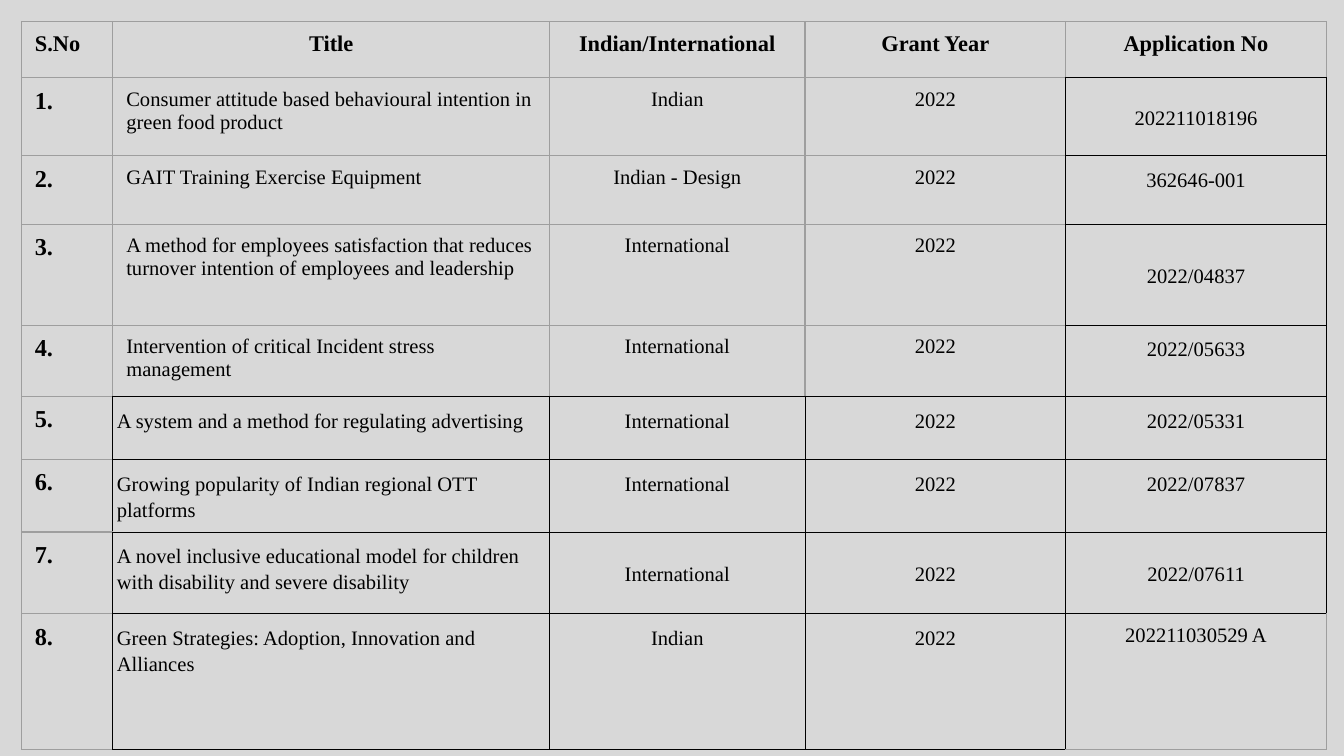
from dataclasses import dataclass

import lxml.etree
import pptx
import pptx.dml.color
import pptx.enum.text
import pptx.oxml.ns
import pptx.table
import pptx.util

ALIGN = pptx.enum.text.PP_ALIGN
ANCHOR = pptx.enum.text.MSO_ANCHOR


@dataclass(frozen=True)
class Theme:
    font: str = "Times New Roman"
    ink: str = "000000"
    background: str = "D8D8D8"
    grey_line: tuple[str, float] = ("9E9E9E", 0.75)
    black_line: tuple[str, float] = ("000000", 0.5)
    header_size: int = 12
    number_size: int = 13
    body_size: int = 11


@dataclass(frozen=True)
class Patent:
    title: str
    scope: str
    application: str
    height: float
    boxed: tuple[int, ...]  # columns with black borders and narrow margins
    middle: tuple[int, ...] = ()  # columns anchored in the middle
    year: str = "2022"


THEME = Theme()
SLIDE_WIDTH = 10
SLIDE_HEIGHT = SLIDE_WIDTH * 9 / 16
HEADERS = ("S.No", "Title", "Indian/International", "Grant Year", "Application No")
COLUMN_WIDTHS = (0.68, 3.25, 1.9, 1.94, 1.94)
HEADER_HEIGHT = 0.42
LEFT = TOP = 0.16
FRAME_SIDE = 3.28  # nominal frame; columns and rows set the drawn size
LAST = (4,)
ALL_BUT_NUMBER = (1, 2, 3, 4)

PATENTS = (
    Patent("Consumer attitude based behavioural intention in green food product",
           "Indian", "202211018196", 0.58, LAST, LAST),
    Patent("GAIT Training Exercise Equipment",
           "Indian - Design", "362646-001", 0.51, LAST),
    Patent("A method for employees satisfaction that reduces turnover intention "
           "of employees and leadership",
           "International", "2022/04837", 0.75, LAST, LAST),
    Patent("Intervention of critical Incident stress management",
           "International", "2022/05633", 0.53, LAST),
    Patent("A system and a method for regulating advertising",
           "International", "2022/05331", 0.47, ALL_BUT_NUMBER),
    Patent("Growing popularity of Indian regional OTT platforms",
           "International", "2022/07837", 0.53, ALL_BUT_NUMBER),
    Patent("A novel inclusive educational model for children with disability "
           "and severe disability",
           "International", "2022/07611", 0.61, ALL_BUT_NUMBER, (2, 3, 4)),
    Patent("Green Strategies: Adoption, Innovation and Alliances",
           "Indian", "202211030529 A", 1.01, (1, 2, 3)),
)


def is_boxed(row: int, col: int) -> bool:
    return 1 <= row <= len(PATENTS) and col in PATENTS[row - 1].boxed


def set_borders(cell: pptx.table._Cell, row: int, col: int) -> None:
    """Draw an edge black where the cell on either side of it is boxed."""
    neighbours = {"lnL": (row, col - 1), "lnR": (row, col + 1),
                  "lnT": (row - 1, col), "lnB": (row + 1, col)}
    tc_pr = cell._tc.get_or_add_tcPr()
    for tag, neighbour in neighbours.items():
        black = is_boxed(row, col) or is_boxed(*neighbour)
        color, width = THEME.black_line if black else THEME.grey_line
        ln = lxml.etree.SubElement(tc_pr, pptx.oxml.ns.qn(f"a:{tag}"),
                                   w=str(pptx.util.Pt(width)))
        fill = lxml.etree.SubElement(ln, pptx.oxml.ns.qn("a:solidFill"))
        lxml.etree.SubElement(fill, pptx.oxml.ns.qn("a:srgbClr"), val=color)


def fill_cell(cell: pptx.table._Cell, row: int, col: int, text: str) -> None:
    boxed = is_boxed(row, col)
    set_borders(cell, row, col)
    cell.fill.background()
    cell.margin_left = cell.margin_right = pptx.util.Inches(0.03 if boxed else 0.1)
    cell.margin_top = cell.margin_bottom = pptx.util.Pt(5.35)
    middle = row > 0 and col in PATENTS[row - 1].middle
    cell.vertical_anchor = ANCHOR.MIDDLE if middle else ANCHOR.TOP

    p = cell.text_frame.paragraphs[0]
    p.text = text
    left = col == 0 or (col == 1 and row > 0)
    p.alignment = ALIGN.LEFT if left else ALIGN.CENTER
    if boxed:
        p.line_spacing = 1.15
    font = p.runs[0].font
    font.name = THEME.font
    font.color.rgb = pptx.dml.color.RGBColor.from_string(THEME.ink)
    font.bold = row == 0 or col == 0
    if row == 0:
        size = THEME.header_size
    else:
        size = THEME.number_size if col == 0 else THEME.body_size
    font.size = pptx.util.Pt(size)


def add_patent_table(s: pptx.slide.Slide) -> None:
    rows = [HEADERS] + [(f"{number}.", patent.title, patent.scope, patent.year,
                         patent.application)
                        for number, patent in enumerate(PATENTS, 1)]
    heights = [HEADER_HEIGHT] + [patent.height for patent in PATENTS]
    side = pptx.util.Inches(FRAME_SIDE)
    sp = s.shapes.add_table(len(rows), len(HEADERS), pptx.util.Inches(LEFT),
                            pptx.util.Inches(TOP), side, side)
    table = sp.table
    table.first_row = table.horz_banding = False
    for column, width in zip(table.columns, COLUMN_WIDTHS):
        column.width = pptx.util.Inches(width)
    for row, (texts, height) in enumerate(zip(rows, heights)):
        table.rows[row].height = pptx.util.Inches(height)
        for col, text in enumerate(texts):
            fill_cell(table.cell(row, col), row, col, text)
    sp.width = sp.height = side


def main() -> None:
    prs = pptx.Presentation()
    prs.slide_width = pptx.util.Inches(SLIDE_WIDTH)
    prs.slide_height = pptx.util.Inches(SLIDE_HEIGHT)
    s = prs.slides.add_slide(prs.slide_layouts[6])
    s.background.fill.solid()
    s.background.fill.fore_color.rgb = pptx.dml.color.RGBColor.from_string(THEME.background)
    add_patent_table(s)
    prs.save("out.pptx")


if __name__ == "__main__":
    main()
